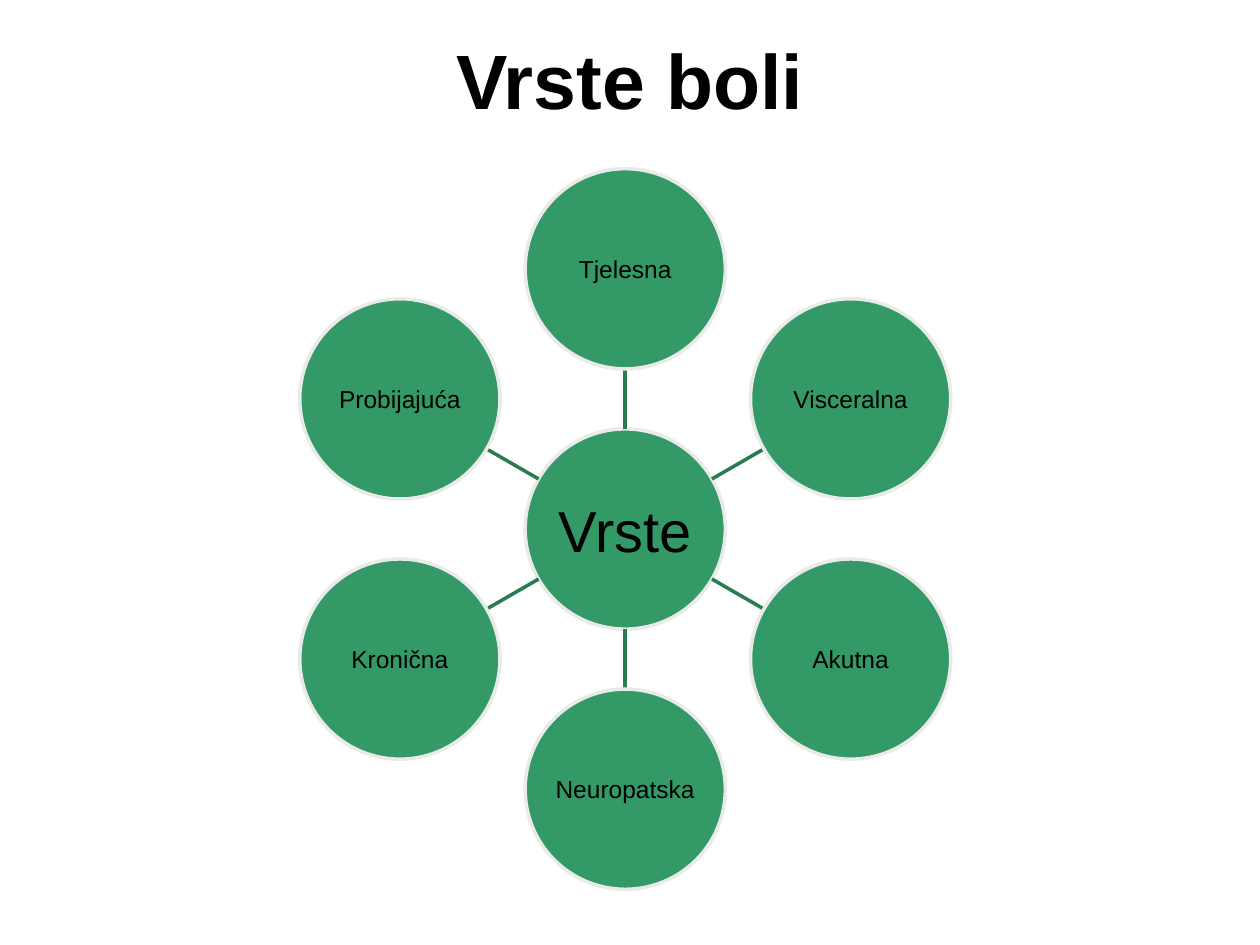
from math import cos, radians, sin

from lxml.etree import SubElement
from pptx import Presentation
from pptx.dml.color import RGBColor
from pptx.enum.shapes import MSO_CONNECTOR, MSO_SHAPE
from pptx.enum.text import MSO_ANCHOR, PP_ALIGN
from pptx.oxml.ns import qn
from pptx.util import Pt

GREEN, DARK, RIM, BLACK = "339966", "297B52", "EAEAEA", "000000"
KINDS = ["Tjelesna", "Visceralna", "Akutna", "Neuropatska", "Kronična", "Probijajuća"]


def paint(fill, code):
    """Give a fill a solid hex colour."""
    fill.solid()
    fill.fore_color.rgb = RGBColor.from_string(code)


def write(shape, text, size=14, bold=False, inset=1, wrap=False):
    """Set centred text in a shape."""
    frame = shape.text_frame
    frame.word_wrap = wrap
    frame.vertical_anchor = MSO_ANCHOR.MIDDLE
    frame.margin_left = frame.margin_right = Pt(inset)
    frame.margin_top = frame.margin_bottom = Pt(inset)
    line = frame.paragraphs[0]
    line.alignment = PP_ALIGN.CENTER
    run = line.add_run()
    run.text = text
    run.font.name, run.font.size, run.font.bold = "Arial", Pt(size), bold
    paint(run.font.fill, BLACK)


def head(slide, text, left, top, width, height):
    """Place the slide title in its box."""
    title = slide.shapes.title
    title.left, title.top = Pt(left), Pt(top)
    title.width, title.height = Pt(width), Pt(height)
    write(title, text, size=44, bold=True, inset=4, wrap=True)


def disc(slide, text, x, y, width, **style):
    """Draw a labelled circle around a centre point."""
    shape = slide.shapes.add_shape(
        MSO_SHAPE.OVAL, Pt(x - width / 2), Pt(y - width / 2), Pt(width), Pt(width))
    shape.shadow.inherit = False
    paint(shape.fill, GREEN)
    paint(shape.line.fill, RIM)
    shape.line.width = Pt(2)
    write(shape, text, **style)


def spoke(slide, start, end):
    """Draw a straight line between two points."""
    link = slide.shapes.add_connector(
        MSO_CONNECTOR.STRAIGHT, *[Pt(value) for value in (*start, *end)])
    paint(link.line.fill, DARK)
    link.line.width = Pt(2)
    SubElement(link._element.spPr, qn("a:effectLst"))


def wheel(slide, hub, names, left, top, width, height, girth=114.4):
    """Arrange circles evenly around a hub, the first one on top."""
    x, y = left + width / 2, top + height / 2
    ring = (height - girth) / 2
    disc(slide, hub, x, y, girth, size=33)
    for index, name in enumerate(names):
        angle = radians(360 * index / len(names) - 90)
        inner, outer, centre = [
            (x + reach * cos(angle), y + reach * sin(angle))
            for reach in (girth / 2, ring - girth / 2, ring)]
        spoke(slide, inner, outer)
        disc(slide, name, *centre, girth)


def main():
    """Build and save the slide."""
    deck = Presentation()
    deck.slide_width, deck.slide_height = Pt(720), Pt(540)
    slide = deck.slides.add_slide(deck.slide_layouts[5])
    head(slide, "Vrste boli", 36, 0, 648, 90)
    wheel(slide, "Vrste", KINDS, 171.4, 96.4, 371.8, 411.8)
    deck.save("out.pptx")


if __name__ == "__main__":
    main()
